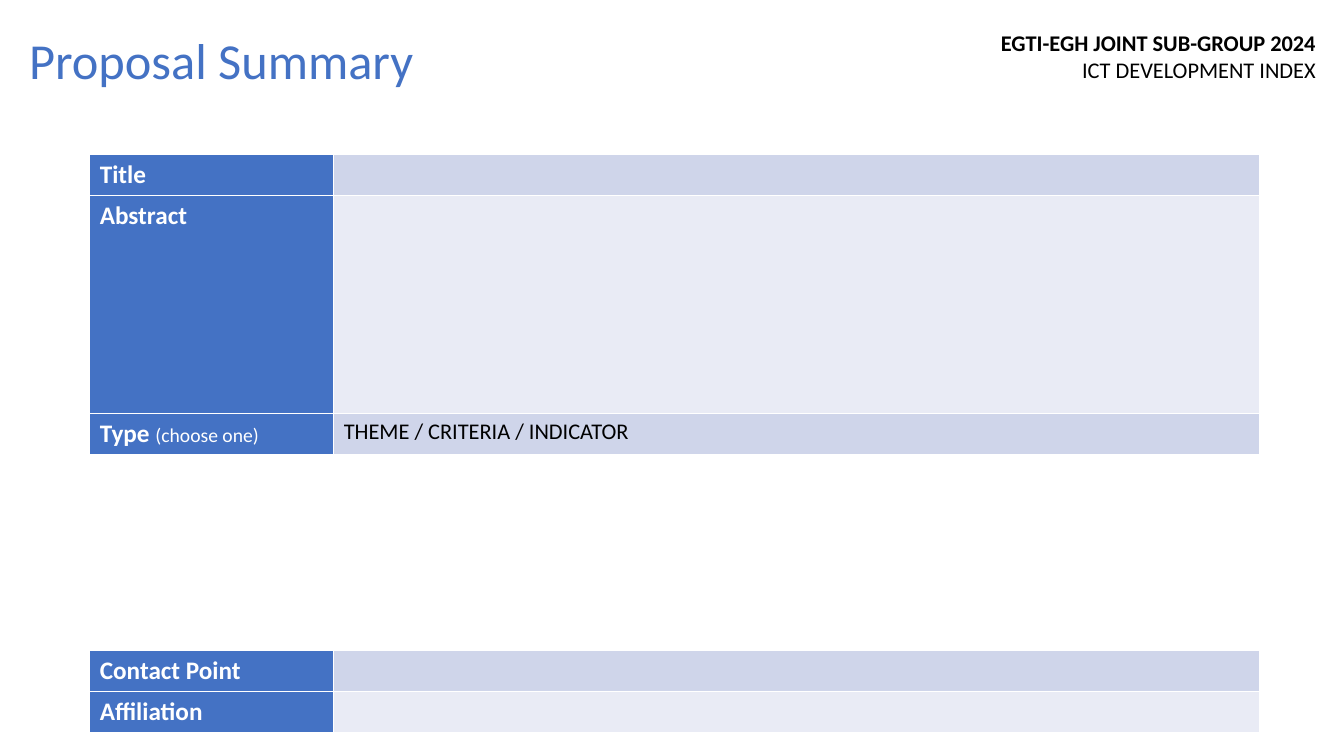
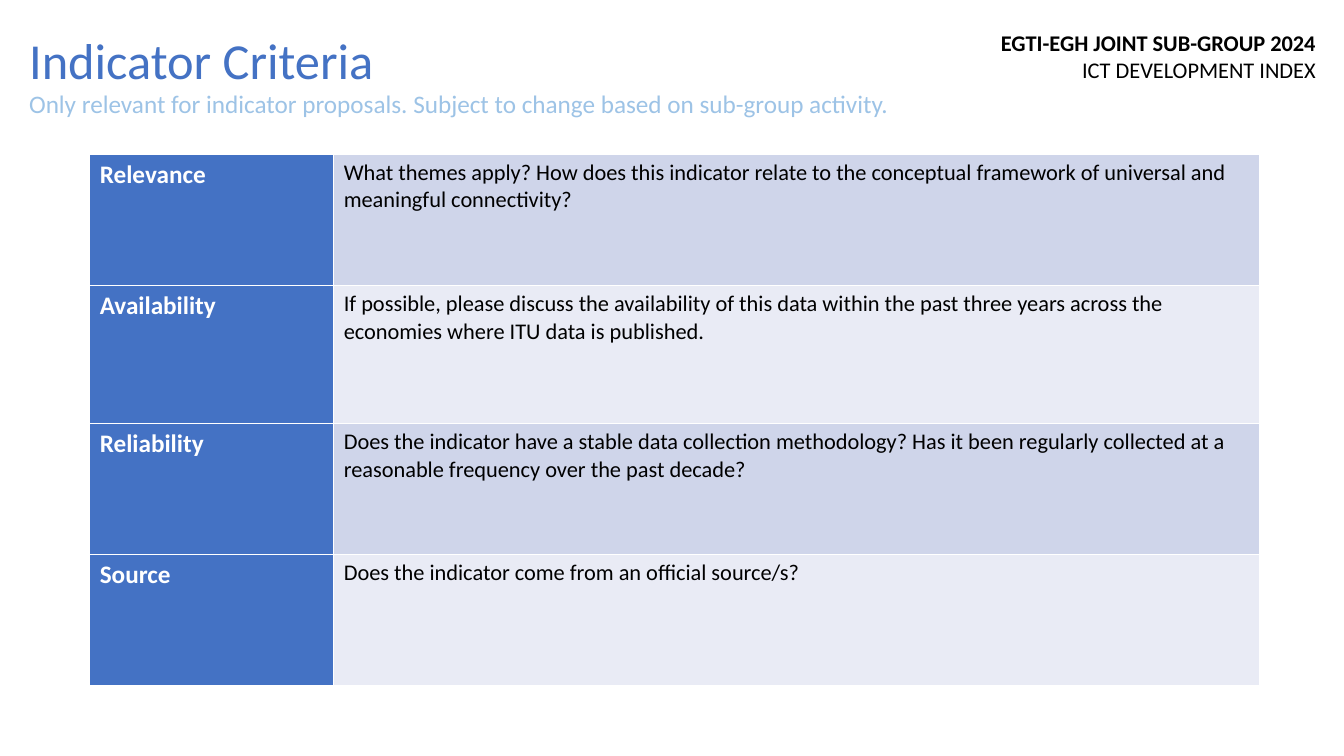
from pptx import Presentation
from pptx.dml.color import RGBColor
from pptx.enum.text import MSO_AUTO_SIZE, PP_ALIGN
from pptx.oxml import parse_xml
from pptx.oxml.ns import nsdecls
from pptx.util import Pt

SCALE = 9144  # EMU in one px, 100 px to the inch
FONT = "Calibri"
BLUE, SKY = "4472C4", "9DC3E6"
BANDS = ("CFD5EA", "E9EBF5")
WHITE, BLACK = "FFFFFF", "000000"
LEFT, TOP = 89, 153
COLS = (242, 918)
SLIM = 41


def px(n):
    return n * SCALE


def color(code):
    return RGBColor.from_string(code)


def write(para, text, size=16, ink=BLACK, bold=False, align=None):
    """Add one formatted run to a paragraph."""
    run = para.add_run()
    run.text = text
    font = run.font
    font.name, font.size, font.bold = FONT, Pt(size), bold
    font.color.rgb = color(ink)
    if align is not None:
        para.alignment = align


def label(slide, left, top, width, height):
    """Add an unwrapped text box and return its frame."""
    box = slide.shapes.add_textbox(px(left), px(top), px(width), px(height))
    frame = box.text_frame
    frame.word_wrap = False
    frame.auto_size = MSO_AUTO_SIZE.SHAPE_TO_FIT_TEXT
    return frame


def paint(cell, fill):
    """Give a cell white borders and a solid fill."""
    props = cell._tc.get_or_add_tcPr()
    for side in ("lnL", "lnR", "lnT", "lnB"):
        props.append(parse_xml(
            f'<a:{side} {nsdecls("a")} w="12700"><a:solidFill>'
            f'<a:srgbClr val="{WHITE}"/></a:solidFill></a:{side}>'))
    cell.fill.solid()
    cell.fill.fore_color.rgb = color(fill)


def form(slide, top, rows):
    """Add a form table; each row is (height, heading, hint, body)."""
    tall = sum(row[0] for row in rows)
    grid = slide.shapes.add_table(len(rows), len(COLS), px(LEFT), px(top),
                                  px(sum(COLS)), px(tall)).table
    grid.first_row = grid.horz_banding = False
    for col, width in zip(grid.columns, COLS):
        col.width = px(width)
    for i, (height, head, hint, body) in enumerate(rows):
        grid.rows[i].height = px(height)
        name, value = grid.cell(i, 0), grid.cell(i, 1)
        paint(name, BLUE)
        paint(value, BANDS[i % 2])
        para = name.text_frame.paragraphs[0]
        write(para, head, size=18, ink=WHITE, bold=True)
        if hint:
            write(para, hint, size=14, ink=WHITE)
        if body:
            write(value.text_frame.paragraphs[0], body)


def page(deck, title, width):
    """Add a slide with the shared title and group heading."""
    slide = deck.slides.add_slide(deck.slide_layouts[6])
    frame = label(slide, 978, 24, 337, 64)
    write(frame.paragraphs[0], "EGTI-EGH JOINT SUB-GROUP 2024",
          bold=True, align=PP_ALIGN.RIGHT)
    write(frame.add_paragraph(), "ICT DEVELOPMENT INDEX",
          align=PP_ALIGN.RIGHT)
    frame = label(slide, 19, 24, width, 71)
    write(frame.paragraphs[0], title, size=36, ink=BLUE)
    return slide


def main():
    deck = Presentation()
    deck.slide_width, deck.slide_height = px(1333), px(750)

    # Proposal summary
    slide = page(deck, "Proposal Summary", 405)
    form(slide, TOP, [
        (SLIM, "Title", "", ""),
        (216, "Abstract", "", ""),
        (SLIM, "Type ", "(choose one)", "THEME / CRITERIA / INDICATOR"),
    ])
    form(slide, 645, [
        (SLIM, "Contact Point", "", ""),
        (SLIM, "Affiliation", "", ""),
    ])

    # Indicator criteria
    slide = page(deck, "Indicator Criteria", 365)
    note = label(slide, 19, 83, 878, 40)
    write(note.paragraphs[0], "Only relevant for indicator proposals. "
          "Subject to change based on sub-group activity.",
          size=18, ink=SKY)
    form(slide, TOP, [
        (130, "Relevance", "",
         "What themes apply? How does this indicator relate to the "
         "conceptual framework of universal and meaningful connectivity?"),
        (137, "Availability", "",
         "If possible, please discuss the availability of this data within "
         "the past three years across the economies where ITU data is "
         "published."),
        (130, "Reliability", "",
         "Does the indicator have a stable data collection methodology? Has "
         "it been regularly collected at a reasonable frequency over the "
         "past decade?"),
        (130, "Source", "",
         "Does the indicator come from an official source/s?"),
    ])

    deck.save("out.pptx")


if __name__ == "__main__":
    main()
